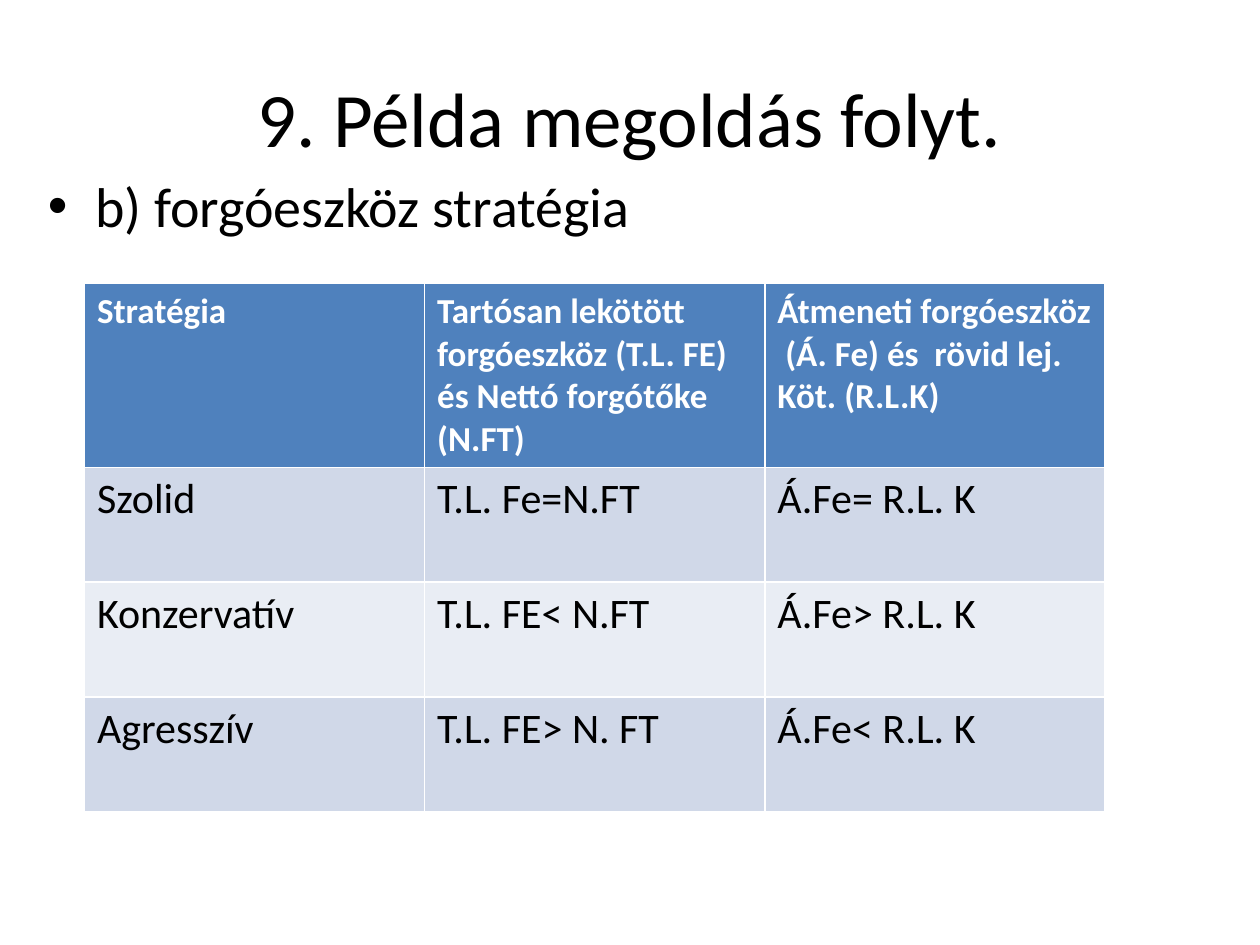
"""Build a slide comparing three working capital strategies in a table."""
from pptx import Presentation, util as u
from pptx.dml.color import RGBColor
from pptx.enum import text as t

HUES = {"ink": "000000", "white": "FFFFFF", "head": "4F81BD",
        "dark": "D0D8E8", "light": "E9EDF4"}
ROWS = [
    ["Stratégia", "Tartósan lekötött forgóeszköz (T.L. FE) és Nettó forgótőke (N.FT)",
     "Átmeneti forgóeszköz  (Á. Fe) és  rövid lej. Köt. (R.L.K)"],
    ["Szolid", "T.L. Fe=N.FT", "Á.Fe= R.L. K"],
    ["Konzervatív", "T.L. FE< N.FT", "Á.Fe> R.L. K"],
    ["Agresszív", "T.L. FE> N. FT", "Á.Fe< R.L. K"],
]


def write(frame, words, size=24, hue="ink", bold=False, align=t.PP_ALIGN.LEFT):
    frame.text = words
    para = frame.paragraphs[0]
    para.alignment = align
    para.space_before = u.Pt(0)
    font = para.runs[0].font
    font.name, font.size, font.bold = "Calibri", u.Pt(size), bold
    font.color.rgb = RGBColor.from_string(HUES[hue])


deck = Presentation()
deck.slide_width, deck.slide_height = u.Inches(10), u.Inches(7.5)
wide, high = deck.slide_width, deck.slide_height
slide = deck.slides.add_slide(deck.slide_layouts[1])

title, body = slide.shapes.title, slide.placeholders[1]
title.left, title.top = int(wide * 0.05), int(high * 0.04)
title.width, title.height = int(wide * 0.9), u.Inches(1.25)
title.text_frame.vertical_anchor = t.MSO_ANCHOR.MIDDLE
write(title.text_frame, "9. Példa megoldás folyt.", size=44, align=t.PP_ALIGN.CENTER)

body.left, body.top = u.Inches(0.28), u.Inches(1.31)
body.width, body.height = int(wide * 0.9), int(high * 0.66)
write(body.text_frame, "b) forgóeszköz stratégia", size=32)

col, row = u.Inches(2.7), u.Inches(0.91)
grid = slide.shapes.add_table(len(ROWS), len(ROWS[0]), u.Inches(0.67), int(high * 0.3),
                              col * len(ROWS[0]), row * len(ROWS)).table
for r, line in enumerate(ROWS):
    grid.rows[r].height = row
    fill = "head" if r == 0 else ("light", "dark")[r % 2]
    style = {"size": 20, "hue": "white", "bold": True} if r == 0 else {}
    for c, words in enumerate(line):
        cell = grid.cell(r, c)
        cell.fill.solid()
        cell.fill.fore_color.rgb = RGBColor.from_string(HUES[fill])
        write(cell.text_frame, words, **style)

deck.save("out.pptx")
